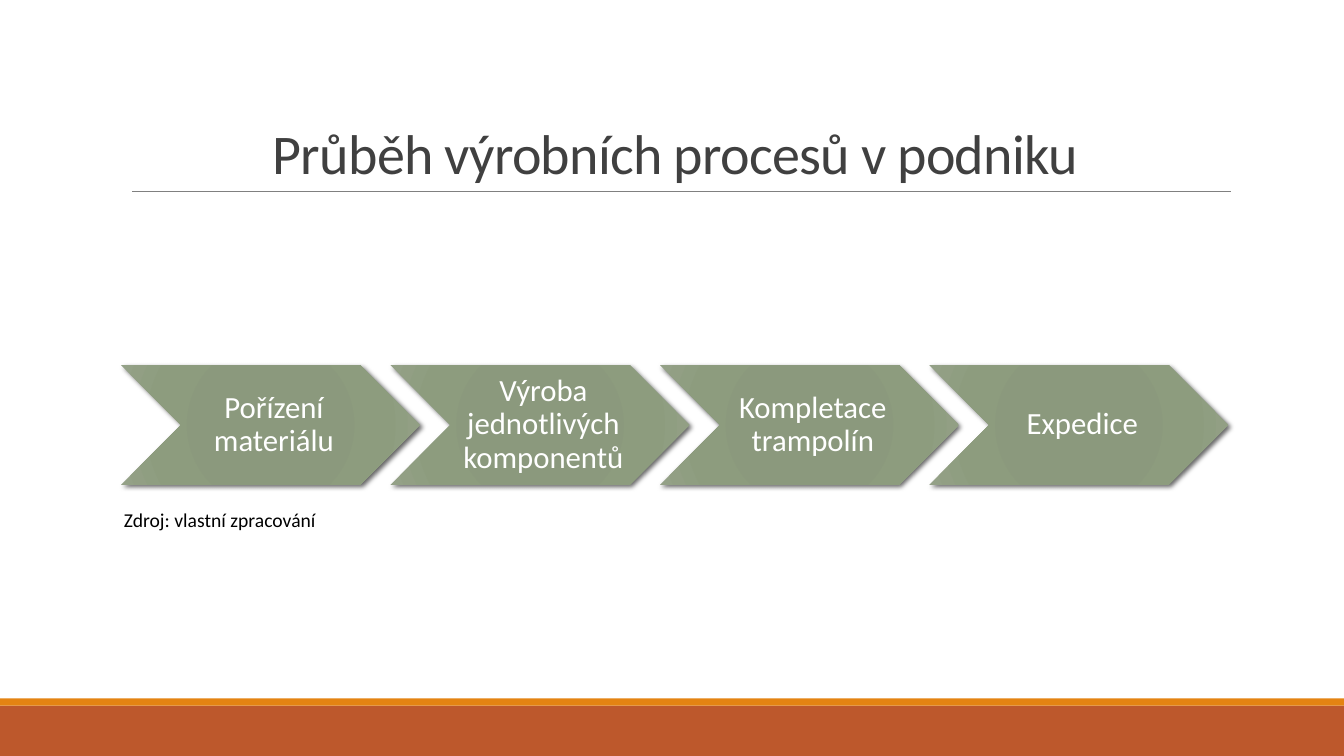
from dataclasses import dataclass
from lxml import etree
from pptx import Presentation
from pptx import util as u
from pptx.dml.color import RGBColor
from pptx.enum import shapes, text
from pptx.oxml import parse_xml
from pptx.oxml.ns import qn, nsdecls

# Content
TITLE = "Průběh výrobních procesů v podniku"
STEPS = ["Pořízení materiálu", "Výroba jednotlivých komponentů",
         "Kompletace trampolín", "Expedice"]
SOURCE = "Zdroj: vlastní zpracování"


@dataclass(frozen=True)
class Theme:
    font: str = "Calibri"
    ink: str = "404040"
    black: str = "000000"
    white: str = "FFFFFF"
    rule: str = "808080"
    rust: str = "BD582C"
    orange: str = "E48312"
    green: tuple = ((0, "8A987B"), (34, "8B997D"), (70, "8D9C7E"), (100, "94A187"))
    head: int = 40
    body: int = 22
    note: int = 14


T = Theme()
WIDE, HIGH = 33.87, 19.05
LEFT, TOP, STEP_W, STEP_H, PITCH = 3.05, 9.2, 7.54, 3.02, 6.79


def box(*sizes):
    return [u.Cm(n) for n in sizes]


def write(frame, words, size, color, align, anchor, pads):
    """Put one styled run in a frame; pads are left, top, right, bottom."""
    frame.auto_size = text.MSO_AUTO_SIZE.NONE
    frame.word_wrap = True
    frame.vertical_anchor = anchor
    (frame.margin_left, frame.margin_top,
     frame.margin_right, frame.margin_bottom) = box(*pads)
    para = frame.paragraphs[0]
    para.alignment = align
    run = para.add_run()
    run.text = words
    font = run.font
    font.name, font.size = T.font, u.Pt(size)
    font.color.rgb = RGBColor.from_string(color)
    return para


def shape(kind, place, color):
    item = slide.shapes.add_shape(kind, *box(*place))
    item.fill.solid()
    item.fill.fore_color.rgb = RGBColor.from_string(color)
    item.line.fill.background()
    item.shadow.inherit = False
    return item


def shade(item):
    """Give a shape the round green gradient and a soft shadow."""
    stops = "".join(f'<a:gs pos="{pos * 1000}"><a:srgbClr val="{color}"/></a:gs>'
                    for pos, color in T.green)
    grad = parse_xml(
        f'<a:gradFill {nsdecls("a")} rotWithShape="1"><a:gsLst>{stops}</a:gsLst>'
        '<a:path path="circle"><a:fillToRect l="100000" t="100000" '
        'r="100000" b="100000"/></a:path></a:gradFill>')
    props = item._element.spPr
    props.replace(props.find(qn("a:solidFill")), grad)
    props.find(qn("a:effectLst")).append(parse_xml(
        f'<a:outerShdw {nsdecls("a")} blurRad="{u.Pt(3.5)}" dist="{u.Pt(2)}" '
        f'dir="2700000" algn="br" rotWithShape="0"><a:srgbClr val="{T.black}">'
        '<a:alpha val="60000"/></a:srgbClr></a:outerShdw>'))


deck = Presentation()
deck.slide_width, deck.slide_height = box(WIDE, HIGH)
slide = deck.slides.add_slide(deck.slide_layouts[5])

# Bands at the foot
for top, high, color in [(17.78, 1.27, T.rust), (17.6, 0.18, T.orange)]:
    shape(shapes.MSO_SHAPE.RECTANGLE, (0, top, WIDE, high), color)

# Title and its rule
title = slide.shapes.title
title.left, title.top, title.width, title.height = box(LEFT, 0.79, 27.94, 4.03)
para = write(title.text_frame, TITLE, T.head, T.ink, text.PP_ALIGN.CENTER,
             text.MSO_ANCHOR.BOTTOM, (0.25, 0.13, 0.25, 0.13))
para.line_spacing = 0.85
para.runs[0].font._element.set("spc", "-50")

rule = slide.shapes.add_connector(shapes.MSO_CONNECTOR.STRAIGHT,
                                  *box(3.33, 4.82, 31.01, 4.82))
rule.line.color.rgb = RGBColor.from_string(T.rule)
rule.line.width = u.Pt(0.5)
etree.SubElement(rule._element.spPr, qn("a:effectLst"))

# Process steps
for i, step in enumerate(STEPS):
    arrow = shape(shapes.MSO_SHAPE.CHEVRON,
                  (LEFT + i * PITCH, TOP, STEP_W, STEP_H), T.green[0][1])
    shade(arrow)
    para = write(arrow.text_frame, step, T.body, T.white, text.PP_ALIGN.CENTER,
                 text.MSO_ANCHOR.MIDDLE, (0.25, 0.08, 0.08, 0.08))
    para.line_spacing = 0.9

# Source note
note = slide.shapes.add_textbox(*box(2.87, 12.67, 5.38, 0.86))
write(note.text_frame, SOURCE, T.note, T.black, text.PP_ALIGN.LEFT,
      text.MSO_ANCHOR.TOP, (0.25, 0.13, 0.25, 0.13))
note.text_frame.word_wrap = False

deck.save("out.pptx")
